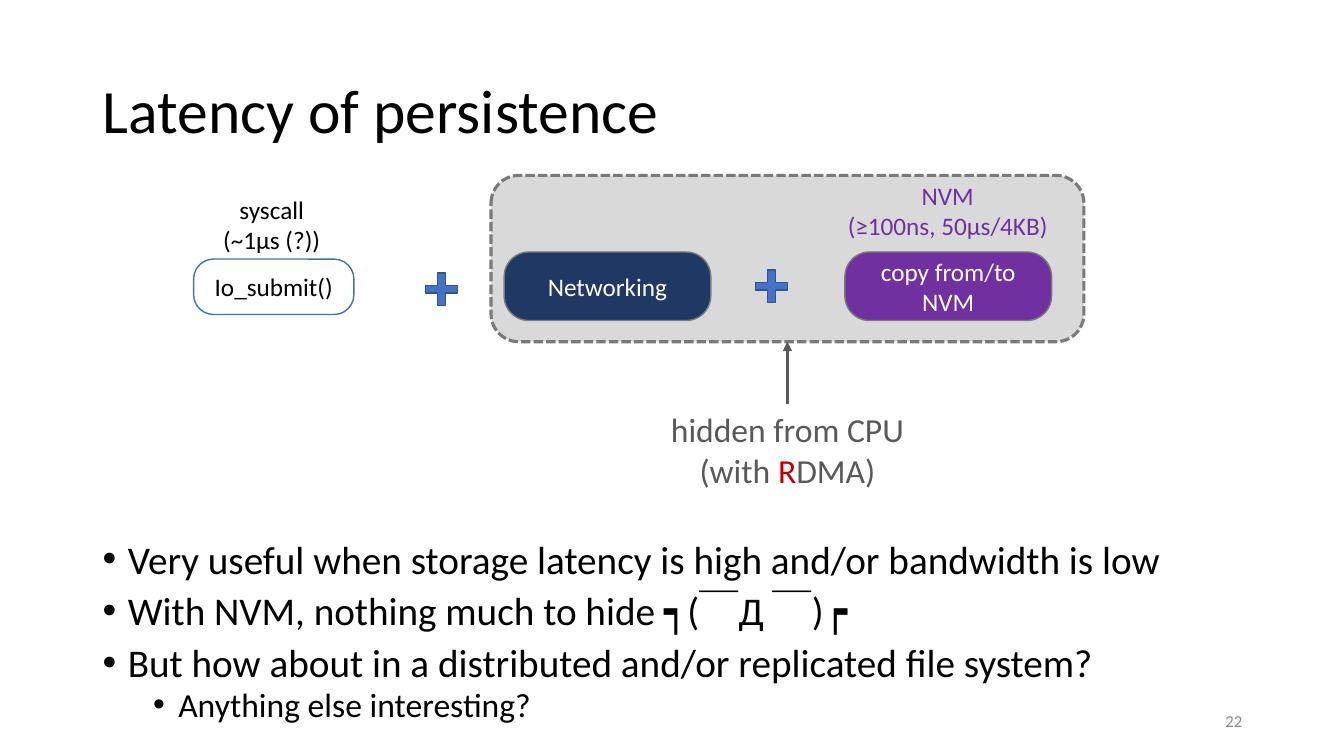
from dataclasses import dataclass

import pptx
import pptx.dml.color
import pptx.enum.dml
import pptx.enum.shapes
import pptx.enum.text
import pptx.oxml
import pptx.oxml.ns
import pptx.util

Inches = pptx.util.Inches
Pt = pptx.util.Pt
SHAPE = pptx.enum.shapes.MSO_SHAPE
ALIGN = pptx.enum.text.PP_ALIGN
ANCHOR = pptx.enum.text.MSO_ANCHOR
FIT = pptx.enum.text.MSO_AUTO_SIZE
BLACK, WHITE, GRAY, PURPLE = "000000", "FFFFFF", "595959", "7030A0"


@dataclass
class Run:
    text: str
    size: float
    color: str = BLACK


@dataclass
class Para:
    runs: list[Run]
    align: ALIGN = ALIGN.CENTER
    spacing: float | None = None
    before: float = 0
    indent: float = 0  # left margin of bulleted text, 0 for no bullet


@dataclass
class Box:
    at: tuple[float, float, float, float]
    paras: list[Para]
    anchor: ANCHOR = ANCHOR.TOP
    wrap: bool = True
    fit: FIT = FIT.NONE


@dataclass
class Block:
    at: tuple[float, float, float, float]
    kind: SHAPE
    fill: str | None
    line: str
    width: float = 1
    adj: float | None = None
    dashed: bool = False
    label: Run | None = None


def rgb(color: str) -> pptx.dml.color.RGBColor:
    return pptx.dml.color.RGBColor.from_string(color)


def write(tf, paras: list[Para], anchor: ANCHOR, wrap: bool = True) -> None:
    tf.word_wrap = wrap
    tf.vertical_anchor = anchor
    for i, para in enumerate(paras):
        p = tf.paragraphs[0] if i == 0 else tf.add_paragraph()
        p.alignment = para.align
        p.space_before = Pt(para.before)
        if para.spacing:
            p.line_spacing = para.spacing
        if para.indent:
            pPr = p._p.get_or_add_pPr()
            pPr.set("marL", str(Inches(para.indent)))
            pPr.set("indent", str(Inches(-0.25)))
            for tag, key, value in (("buFont", "typeface", "Arial"), ("buChar", "char", "•")):
                bullet = pptx.oxml.parse_xml(f"<a:{tag} {pptx.oxml.ns.nsdecls('a')}/>")
                bullet.set(key, value)
                pPr.append(bullet)
        for run in para.runs:
            r = p.add_run()
            r.text = run.text
            r.font.name = "Calibri"
            r.font.size = Pt(run.size)
            r.font.color.rgb = rgb(run.color)


def add_box(slide, box: Box) -> None:
    tf = slide.shapes.add_textbox(*map(Inches, box.at)).text_frame
    write(tf, box.paras, box.anchor, box.wrap)
    tf.auto_size = box.fit


def add_block(slide, block: Block) -> None:
    sp = slide.shapes.add_shape(block.kind, *map(Inches, block.at))
    sp.shadow.inherit = False
    if block.adj is not None:
        sp.adjustments[0] = block.adj
    if block.fill:
        sp.fill.solid()
        sp.fill.fore_color.rgb = rgb(block.fill)
    else:
        sp.fill.background()
    sp.line.color.rgb = rgb(block.line)
    sp.line.width = Pt(block.width)
    if block.dashed:
        sp.line.dash_style = pptx.enum.dml.MSO_LINE.SQUARE_DOT
        # The square-dot preset is replaced by the short system dash
        sp.line._ln.find(pptx.oxml.ns.qn("a:prstDash")).set("val", "sysDash")
    if block.label:
        write(sp.text_frame, [Para([block.label])], ANCHOR.MIDDLE)


def add_arrow(slide, x: float, start: float, end: float) -> None:
    cxn = slide.shapes.add_connector(pptx.enum.shapes.MSO_CONNECTOR.CURVE,
                                     Inches(x), Inches(start), Inches(x), Inches(end))
    cxn.line.color.rgb = rgb(GRAY)
    cxn.line.width = Pt(2.25)
    ns = pptx.oxml.ns.nsdecls("a")
    cxn.line._ln.append(pptx.oxml.parse_xml(f'<a:tailEnd {ns} type="triangle"/>'))
    cxn._element.spPr.append(pptx.oxml.parse_xml(f"<a:effectLst {ns}/>"))


def stage(x: float, fill: str, text: str) -> Block:
    return Block((x, 2.5, 2.05, 0.68), SHAPE.ROUNDED_RECTANGLE, fill, "7A7A7A",
                 adj=0.36, label=Run(text, 18, WHITE))


def plus(x: float, y: float) -> Block:
    return Block((x, y, 0.32, 0.32), SHAPE.CROSS, "4472C4", "325491", adj=0.38)


def caption(x: float, y: float, w: float, lines: list[str], color: str) -> Box:
    return Box((x, y, w, 0.71), [Para([Run(t, 18, color)]) for t in lines],
               fit=FIT.SHAPE_TO_FIT_TEXT)


def bullet(text: str, size: float = 28, before: float = 10, indent: float = 0.25) -> Para:
    return Para([Run(text, size)], ALIGN.LEFT, 0.8, before, indent)


BLOCKS = [
    Block((4.87, 1.74, 5.88, 1.65), SHAPE.ROUNDED_RECTANGLE, "D9D9D9", "7A7A7A",
          width=2.25, dashed=True),
    Block((1.92, 2.57, 1.59, 0.55), SHAPE.ROUNDED_RECTANGLE, None, "43739E",
          adj=0.36, label=Run("Io_submit()", 18)),
    plus(4.22, 2.71),
    stage(5, "203864", "Networking"),
    plus(7.49, 2.68),
    stage(8.38, PURPLE, "copy from/to NVM"),
]

BOXES = [
    Box((0.92, 0.4, 11.5, 1.45),
        [Para([Run("Latency of persistence", 44)], ALIGN.LEFT, 0.9)], ANCHOR.MIDDLE),
    caption(2.06, 1.88, 1.27, ["syscall", "(~1μs (?))"], BLACK),
    caption(8.17, 1.74, 2.46, ["NVM", "(≥100ns, 50μs/4KB)"], PURPLE),
    Box((6.54, 4.01, 2.54, 0.91),
        [Para([Run("hidden from CPU", 24, GRAY)]),
         Para([Run("(with ", 24, GRAY), Run("R", 24, "C00000"), Run("DMA)", 24, GRAY)])],
        wrap=False, fit=FIT.SHAPE_TO_FIT_TEXT),
    Box((0.92, 5.35, 11.5, 2),
        [bullet("Very useful when storage latency is high and/or bandwidth is low"),
         bullet("With NVM, nothing much to hide ┑(￣Д ￣)┍"),
         bullet("But how about in a distributed and/or replicated file system?"),
         bullet("Anything else interesting?", 24, 5, 0.75)]),
    Box((9.42, 6.95, 3, 0.4), [Para([Run("22", 12, "8C8C8C")], ALIGN.RIGHT)], ANCHOR.MIDDLE),
]


def main() -> None:
    prs = pptx.Presentation()
    prs.slide_width, prs.slide_height = Inches(13.33), Inches(7.5)
    slide = prs.slides.add_slide(prs.slide_layouts[6])

    # Latency pipeline
    for block in BLOCKS:
        add_block(slide, block)
    add_arrow(slide, 7.81, 4.01, 3.39)

    # Title, captions, bullets and page number
    for box in BOXES:
        add_box(slide, box)

    prs.save("out.pptx")


if __name__ == "__main__":
    main()
